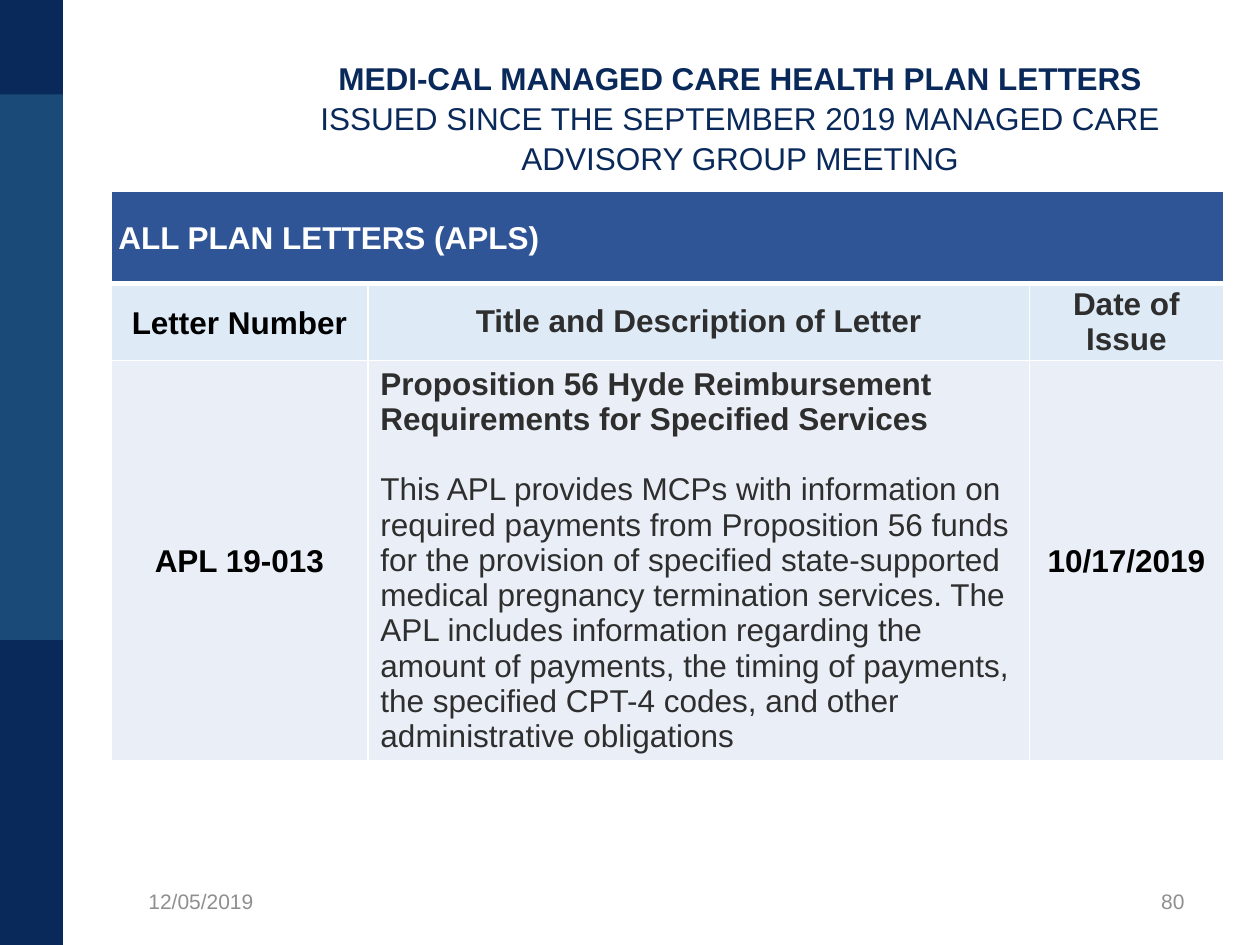
from lxml import etree
from pptx import Presentation, util as u
from pptx.dml.color import RGBColor
from pptx.enum import shapes, text
from pptx.oxml.ns import qn

COLORS = {
    "navy": "0A295B", "blue": "1A4A78", "banner": "2F5597", "heading": "DEEBF7",
    "body": "EAEFF7", "white": "FFFFFF", "black": "000000", "dark": "2E2E2E", "gray": "8F8F8F",
}
LEFT, CENTER, RIGHT = text.PP_ALIGN.LEFT, text.PP_ALIGN.CENTER, text.PP_ALIGN.RIGHT


def color(name):
    return RGBColor.from_string(COLORS[name])


class Builder:
    """Holds the style and the current slide."""
    font = {"name": "Arial", "size": u.Pt(18), "bold": False}

    def __init__(self, deck):
        self.page = deck.slides.add_slide(deck.slide_layouts[6])

    def style(self, span, ink, **changes):
        for key, value in {**self.font, **changes}.items():
            setattr(span.font, key, value)
        span.font.color.rgb = color(ink)

    def add_words(self, para, words, ink, layout=None, **changes):
        for key, value in (layout or {}).items():
            setattr(para, key, value)
        span = para.add_run()
        span.text = words
        self.style(span, ink, **changes)

    def band(self, top, height, fill):
        box = self.page.shapes.add_shape(
            shapes.MSO_SHAPE.RECTANGLE, 0, u.Inches(top), u.Inches(0.5), u.Inches(height))
        box.shadow.inherit = False
        box.fill.solid()
        box.fill.fore_color.rgb = color(fill)
        box.line.fill.background()

    def textbox(self, *place):
        frame = self.page.shapes.add_textbox(*map(u.Inches, place)).text_frame
        frame.word_wrap = True
        frame.vertical_anchor = text.MSO_ANCHOR.MIDDLE
        return frame.paragraphs[0]

    def table(self, left, top, widths, heights):
        table = self.page.shapes.add_table(
            len(heights), len(widths), u.Inches(left), u.Inches(top),
            u.Inches(sum(widths)), u.Inches(sum(heights))).table
        for column, width in zip(table.columns, widths):
            column.width = u.Inches(width)
        for row, height in zip(table.rows, heights):
            row.height = u.Inches(height)
        return table

    def cell(self, cell, fill, margins=None, thick=None):
        """Fill a cell and give it white borders, 3 pt on the thick side."""
        cell.vertical_anchor = text.MSO_ANCHOR.MIDDLE
        for side, size in (margins or {}).items():
            setattr(cell, f"margin_{side}", u.Inches(size))
        properties = cell._tc.get_or_add_tcPr()
        for side in "LRTB":
            width = u.Pt(3 if side == thick else 1)
            line = etree.SubElement(properties, qn(f"a:ln{side}"), w=str(width))
            solid = etree.SubElement(line, qn("a:solidFill"))
            etree.SubElement(solid, qn("a:srgbClr"), val=COLORS["white"])
        cell.fill.solid()
        cell.fill.fore_color.rgb = color(fill)
        return cell.text_frame.paragraphs[0]


def main():
    deck = Presentation()
    deck.slide_width, deck.slide_height = u.Inches(10), u.Inches(7.5)
    build = Builder(deck)

    # Side bands
    build.band(0, 7.5, "blue")
    build.band(0, 0.75, "navy")
    build.band(5.08, 2.42, "navy")

    # Letters table
    table = build.table(0.88, 1.52, [2.04, 5.25, 1.54], [0.73, 0.61, 3.17])
    tight = {"left": 0.06, "right": 0.06, "top": 0, "bottom": 0}
    loose = {"alignment": CENTER, "line_spacing": 1.08}

    # Banner row
    banner = [build.cell(table.cell(0, column), "banner", {**tight, "top": 0.02}, "B")
              for column in range(3)]
    table.cell(0, 0).merge(table.cell(0, 2))
    build.add_words(banner[0], "ALL PLAN LETTERS (APLS)", "white", bold=True)

    # Column headings
    headings = [("Letter Number", "black", loose),
                ("Title and Description of Letter", "dark", {"alignment": CENTER}),
                ("Date of Issue", "dark", {"alignment": CENTER})]
    for column, (words, ink, layout) in enumerate(headings):
        para = build.cell(table.cell(1, column), "heading", tight, "T")
        build.add_words(para, words, ink, layout, bold=True)

    # Letter row
    number, subject, date = [build.cell(table.cell(2, column), "body") for column in range(3)]
    build.add_words(number, "APL 19-013", "black", loose, bold=True)
    build.add_words(date, "10/17/2019", "black", loose, bold=True)
    build.add_words(subject, "Proposition 56 Hyde Reimbursement Requirements for Specified Services",
                    "dark", bold=True)
    description = table.cell(2, 1).text_frame.add_paragraph()
    build.add_words(
        description,
        "This APL provides MCPs with information on required payments from Proposition 56 "
        "funds for the provision of specified state-supported medical pregnancy termination "
        "services. The APL includes information regarding the amount of payments, the timing "
        "of payments, the specified CPT-4 codes, and other administrative obligations",
        "dark", {"space_before": u.Pt(20)})

    # Footer
    for left, words, align in [(1.08, "12/05/2019", LEFT), (7.17, "80", RIGHT)]:
        build.add_words(build.textbox(left, 6.95, 2.33, 0.4), words, "gray",
                        {"alignment": align}, size=u.Pt(12))

    # Title
    title = build.textbox(2, 0.3, 7.75, 1.25)
    build.add_words(title, "MEDI-CAL MANAGED CARE HEALTH PLAN LETTERS", "navy",
                    {"alignment": CENTER, "line_spacing": 1.07}, bold=True)
    title.add_line_break()
    build.add_words(title, "ISSUED SINCE THE SEPTEMBER 2019 MANAGED CARE ADVISORY GROUP MEETING",
                    "navy")

    deck.save("out.pptx")


if __name__ == "__main__":
    main()
